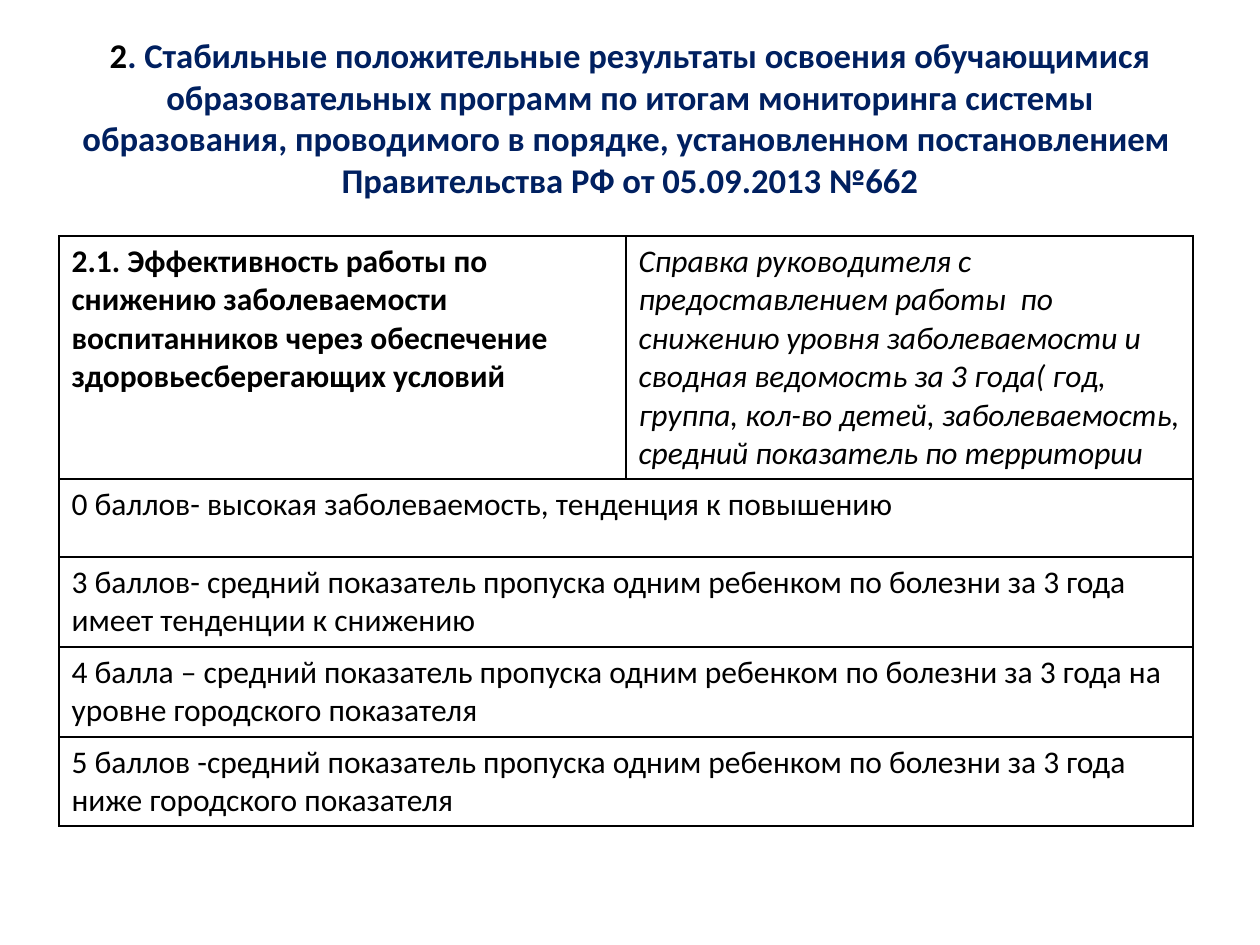
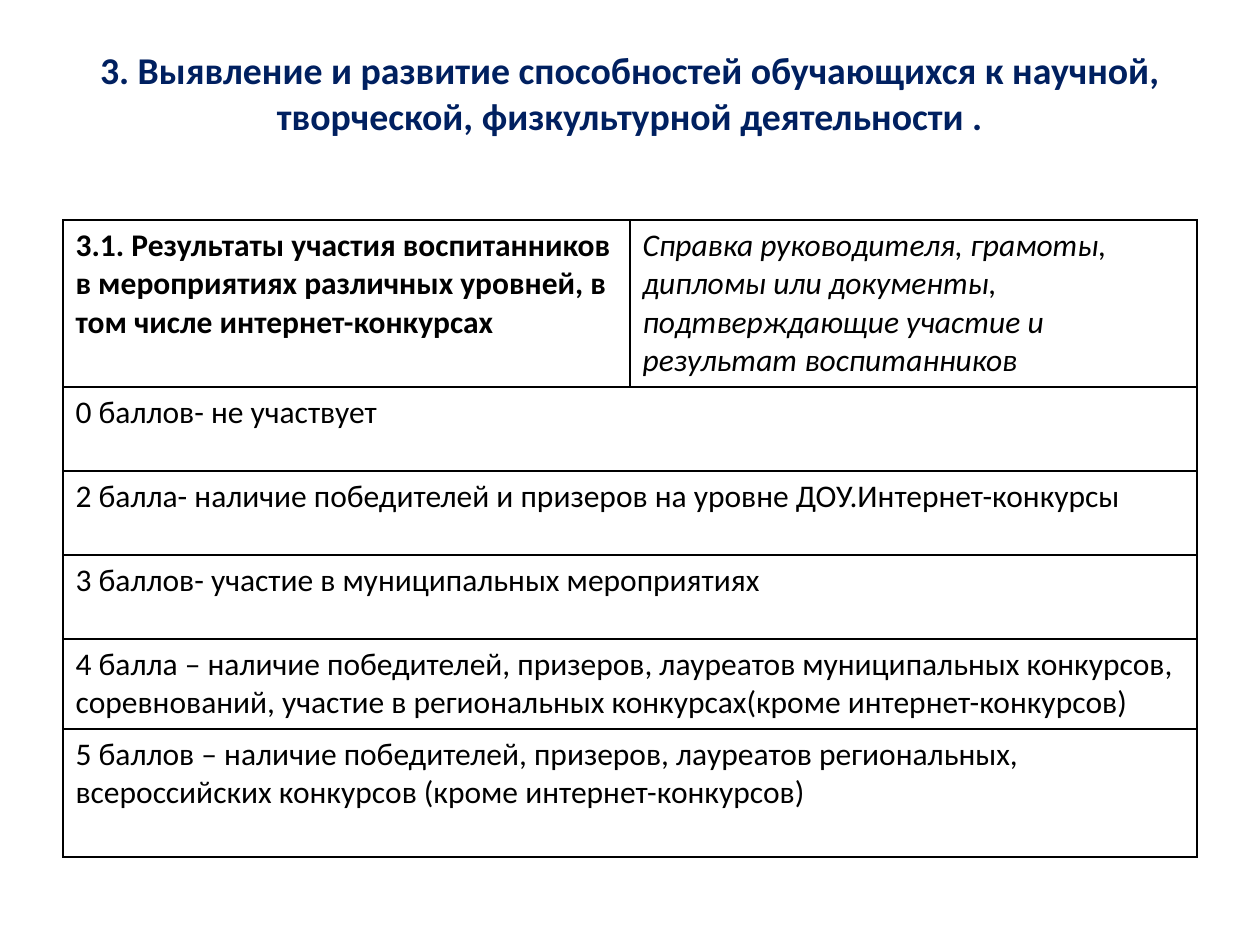
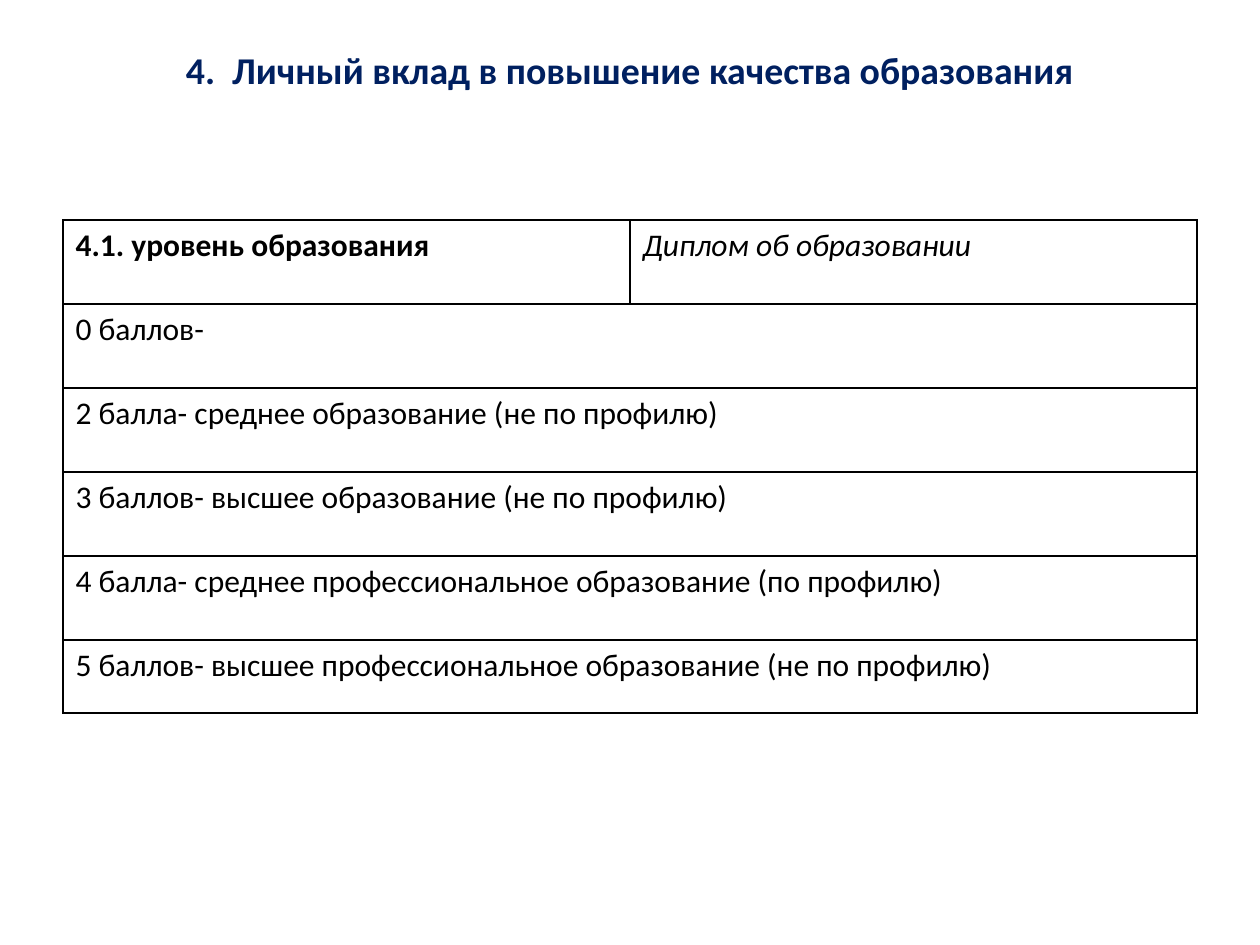
from lxml import etree
from pptx import Presentation
from pptx import util as u
from pptx.dml.color import RGBColor
from pptx.enum import text
from pptx.oxml.ns import qn

BLACK = RGBColor(0x00, 0x00, 0x00)
NAVY = RGBColor(0x00, 0x20, 0x60)
FONT = "Calibri"
COLUMN_WIDTH = 567


def px(length):
    return u.Inches(length / 126)


def style_span(span, size, color, bold=False, italic=False):
    span.font.name = FONT
    span.font.size = u.Pt(size)
    span.font.color.rgb = color
    span.font.bold = bold
    span.font.italic = italic


MIDDLE, TOP = text.MSO_ANCHOR.MIDDLE, text.MSO_ANCHOR.TOP

slides = [
    {
        "title": [
            ("2", BLACK),
            (". Стабильные положительные результаты освоения обучающимися образовательных программ "
             "по итогам мониторинга системы образования, проводимого в порядке, установленном "
             "постановлением  Правительства РФ от 05.09.2013 №662", NAVY),
        ],
        "title_size": 19.8,
        "anchor": MIDDLE,
        "table_at": (59, 236),
        "criterion": "2.1. Эффективность работы по снижению заболеваемости воспитанников "
                     "через обеспечение здоровьесберегающих условий",
        "evidence": "Справка руководителя с предоставлением работы  по снижению уровня заболеваемости "
                    "и сводная ведомость за 3 года( год, группа, кол-во детей, заболеваемость, "
                    "средний показатель по территории",
        "scores": [
            "0 баллов- высокая заболеваемость, тенденция к повышению",
            "3 баллов- средний показатель пропуска одним ребенком по болезни за 3 года "
            "имеет тенденции к снижению",
            "4 балла – средний показатель пропуска одним ребенком по болезни за 3 года "
            "на уровне городского показателя",
            "5 баллов -средний показатель пропуска одним ребенком по болезни за 3 года "
            "ниже городского показателя",
        ],
        "row_heights": [243, 78, 90, 90, 89],
    },
    {
        "title": [("3. Выявление и развитие способностей обучающихся к научной, творческой, "
                   "физкультурной деятельности .", NAVY)],
        "title_size": 21.6,
        "anchor": TOP,
        "table_at": (63, 220),
        "criterion": "3.1. Результаты участия воспитанников в мероприятиях различных уровней, "
                     "в том числе интернет-конкурсах",
        "evidence": "Справка руководителя, грамоты, дипломы или документы, подтверждающие участие "
                    "и результат воспитанников",
        "scores": [
            "0 баллов- не участвует",
            "2 балла- наличие победителей и призеров на уровне ДОУ.Интернет-конкурсы",
            "3 баллов- участие в муниципальных мероприятиях",
            "4 балла – наличие победителей, призеров, лауреатов муниципальных конкурсов, "
            "соревнований, участие в региональных конкурсах(кроме интернет-конкурсов)",
            "5 баллов – наличие победителей, призеров, лауреатов региональных, "
            "всероссийских конкурсов (кроме интернет-конкурсов)",
        ],
        "row_heights": [167, 84, 84, 84, 90, 128],
    },
    {
        "title": [("4.  Личный вклад в повышение качества образования", NAVY)],
        "title_size": 21.6,
        "anchor": TOP,
        "table_at": (63, 220),
        "criterion": "4.1. уровень образования",
        "evidence": "Диплом об образовании",
        "scores": [
            "0 баллов-",
            "2 балла- среднее образование (не по профилю)",
            "3 баллов- высшее образование (не по профилю)",
            "4 балла- среднее профессиональное образование (по профилю)",
            "5 баллов- высшее профессиональное образование (не по профилю)",
        ],
        "row_heights": [84, 84, 84, 84, 84, 73],
    },
]

deck = Presentation()
deck.slide_width, deck.slide_height = px(1260), px(945)

for content in slides:
    page = deck.slides.add_slide(deck.slide_layouts[6])

    title = page.shapes.add_textbox(px(63), px(38), px(1134), px(149))
    frame = title.text_frame
    frame.word_wrap = True
    frame.vertical_anchor = content["anchor"]
    frame.margin_top, frame.margin_bottom = px(9), 0
    para = frame.paragraphs[0]
    para.alignment = text.PP_ALIGN.CENTER
    for words, color in content["title"]:
        span = para.add_run()
        span.text = words
        style_span(span, content["title_size"], color, bold=True)

    heights = content["row_heights"]
    left, top = content["table_at"]
    table = page.shapes.add_table(
        len(heights), 2, px(left), px(top), px(2 * COLUMN_WIDTH), px(sum(heights))
    ).table
    table.first_row = False
    table.horz_banding = False
    for column in table.columns:
        column.width = px(COLUMN_WIDTH)
    for row, height in zip(table.rows, heights):
        row.height = px(height)

    table.cell(0, 0).text = content["criterion"]
    table.cell(0, 1).text = content["evidence"]
    for index, score in enumerate(content["scores"], start=1):
        table.cell(index, 0).merge(table.cell(index, 1))
        table.cell(index, 0).text = score

    for row_index, row in enumerate(table.rows):
        for column_index, cell in enumerate(row.cells):
            for span in cell.text_frame.paragraphs[0].runs:
                style_span(span, 18, BLACK, bold=row_index == 0 and column_index == 0,
                           italic=column_index == 1)
            properties = cell._tc.get_or_add_tcPr()
            for side in ("a:lnL", "a:lnR", "a:lnT", "a:lnB"):
                border = etree.SubElement(properties, qn(side), w=str(u.Pt(1)))
                fill = etree.SubElement(border, qn("a:solidFill"))
                etree.SubElement(fill, qn("a:srgbClr"), val=str(BLACK))
            cell.fill.background()

deck.save("out.pptx")
